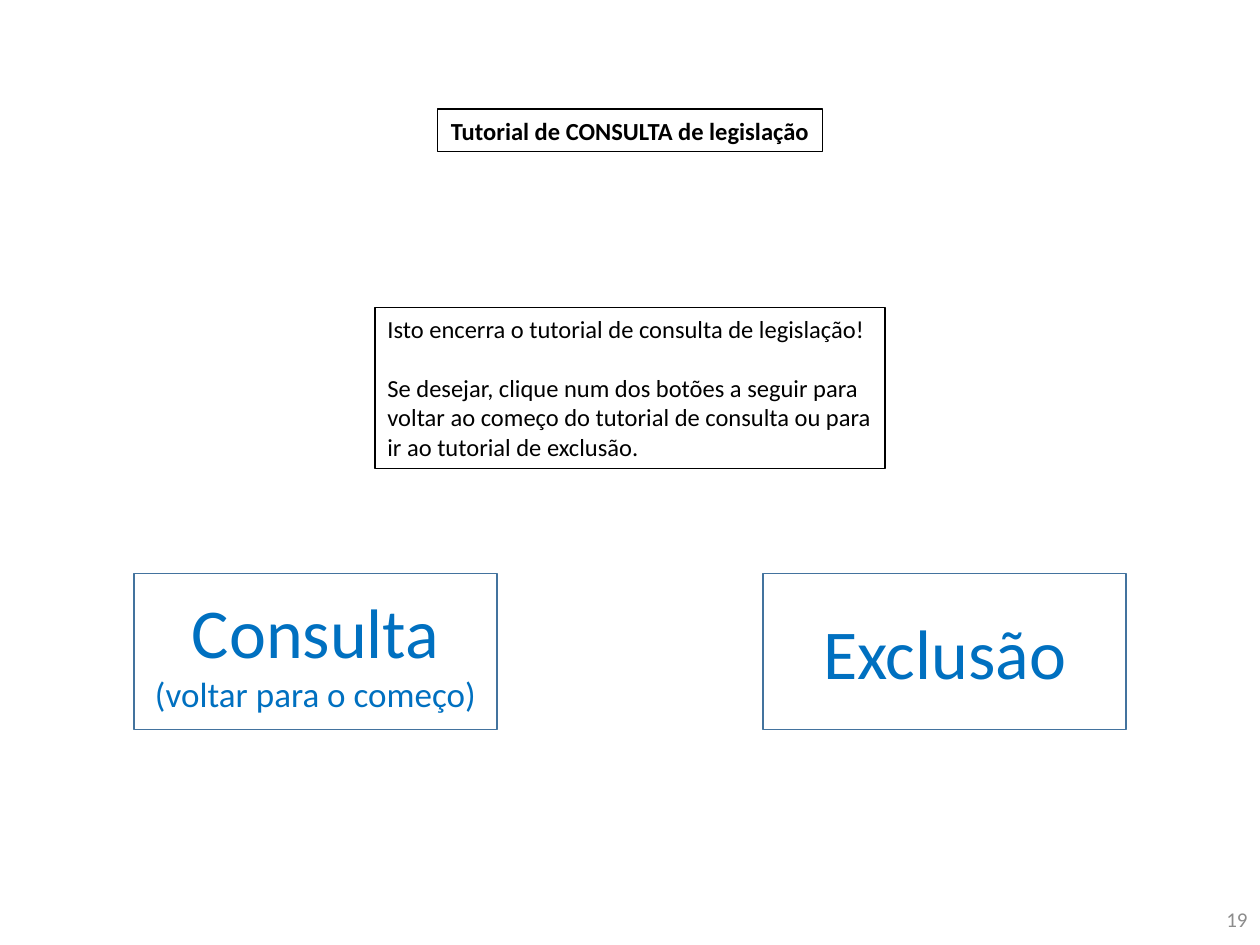
from pptx import Presentation
from pptx.dml.color import RGBColor
from pptx.enum.shapes import MSO_SHAPE as Shape
from pptx.enum.text import MSO_ANCHOR as Anchor, MSO_AUTO_SIZE as AutoSize, PP_ALIGN as Align
from pptx.util import Cm, Pt

BLACK = RGBColor(0x00, 0x00, 0x00)
WHITE = RGBColor(0xFF, 0xFF, 0xFF)
BLUE = RGBColor(0x00, 0x70, 0xC0)
BORDER = RGBColor(0x43, 0x73, 0x9E)
GREY = RGBColor(0x8C, 0x8C, 0x8C)

TITLE = "Tutorial de CONSULTA de legislação"
MESSAGE = [
    ("Isto encerra o tutorial de consulta de legislação!", 14),
    ("Se desejar, clique num dos botões a seguir para voltar ao começo "
     "do tutorial de consulta ou para ir ao tutorial de exclusão.", 14),
]
BUTTONS = [
    [("Consulta", 40), ("(voltar para o começo)", 20)],
    [("Exclusão", 40)],
]
PAGE_NUMBER = "19"

SLIDE_WIDTH, SLIDE_HEIGHT = 25.4, 19.05
BUTTON_WIDTH, BUTTON_HEIGHT, BUTTON_TOP = 7.32, 3.15, 11.56
BUTTON_MARGIN = 2.7


def write(box, lines, color=BLACK, bold=False, align=Align.LEFT, anchor=Anchor.TOP, gap=0):
    """Fill box with (text, size) lines, with gap points between them."""
    frame = box.text_frame
    frame.auto_size = AutoSize.NONE
    frame.word_wrap = True
    frame.vertical_anchor = anchor
    for index, (text, size) in enumerate(lines):
        para = frame.paragraphs[0] if index == 0 else frame.add_paragraph()
        para.alignment = align
        para.space_before = Pt(gap if index else 0)
        span = para.add_run()
        span.text = text
        span.font.name = "Calibri"
        span.font.size = Pt(size)
        span.font.bold = bold
        span.font.color.rgb = color


def place(box, left, top, width, height):
    box.left, box.top, box.width, box.height = map(Cm, (left, top, width, height))


def outline(box, color, width):
    box.line.color.rgb = color
    box.line.width = Pt(width)


def add_rectangle(slide, left, top, width, height):
    box = slide.shapes.add_shape(Shape.RECTANGLE, *map(Cm, (left, top, width, height)))
    box.shadow.inherit = False
    box.fill.background()
    return box


def main():
    deck = Presentation()
    deck.slide_width, deck.slide_height = Cm(SLIDE_WIDTH), Cm(SLIDE_HEIGHT)
    slide = deck.slides.add_slide(deck.slide_layouts[5])

    title = slide.shapes.title
    place(title, 8.82, 2.2, 7.76, 0.86)
    outline(title, BLACK, 0.75)
    write(title, [(TITLE, 14)], bold=True, align=Align.CENTER, anchor=Anchor.MIDDLE)

    message = add_rectangle(slide, 7.56, 6.2, 10.28, 3.25)
    message.fill.solid()
    message.fill.fore_color.rgb = WHITE
    outline(message, BLACK, 0.75)
    write(message, MESSAGE, gap=17)

    button_step = SLIDE_WIDTH - 2 * BUTTON_MARGIN - BUTTON_WIDTH
    for index, lines in enumerate(BUTTONS):
        left = BUTTON_MARGIN + index * button_step
        button = add_rectangle(slide, left, BUTTON_TOP, BUTTON_WIDTH, BUTTON_HEIGHT)
        outline(button, BORDER, 1)
        write(button, lines, color=BLUE, align=Align.CENTER, anchor=Anchor.MIDDLE)

    number = slide.shapes.add_textbox(Cm(19.68), Cm(18.02), Cm(5.72), Cm(1.01))
    write(number, [(PAGE_NUMBER, 12)], color=GREY, align=Align.RIGHT, anchor=Anchor.MIDDLE)

    deck.save("out.pptx")


if __name__ == "__main__":
    main()
